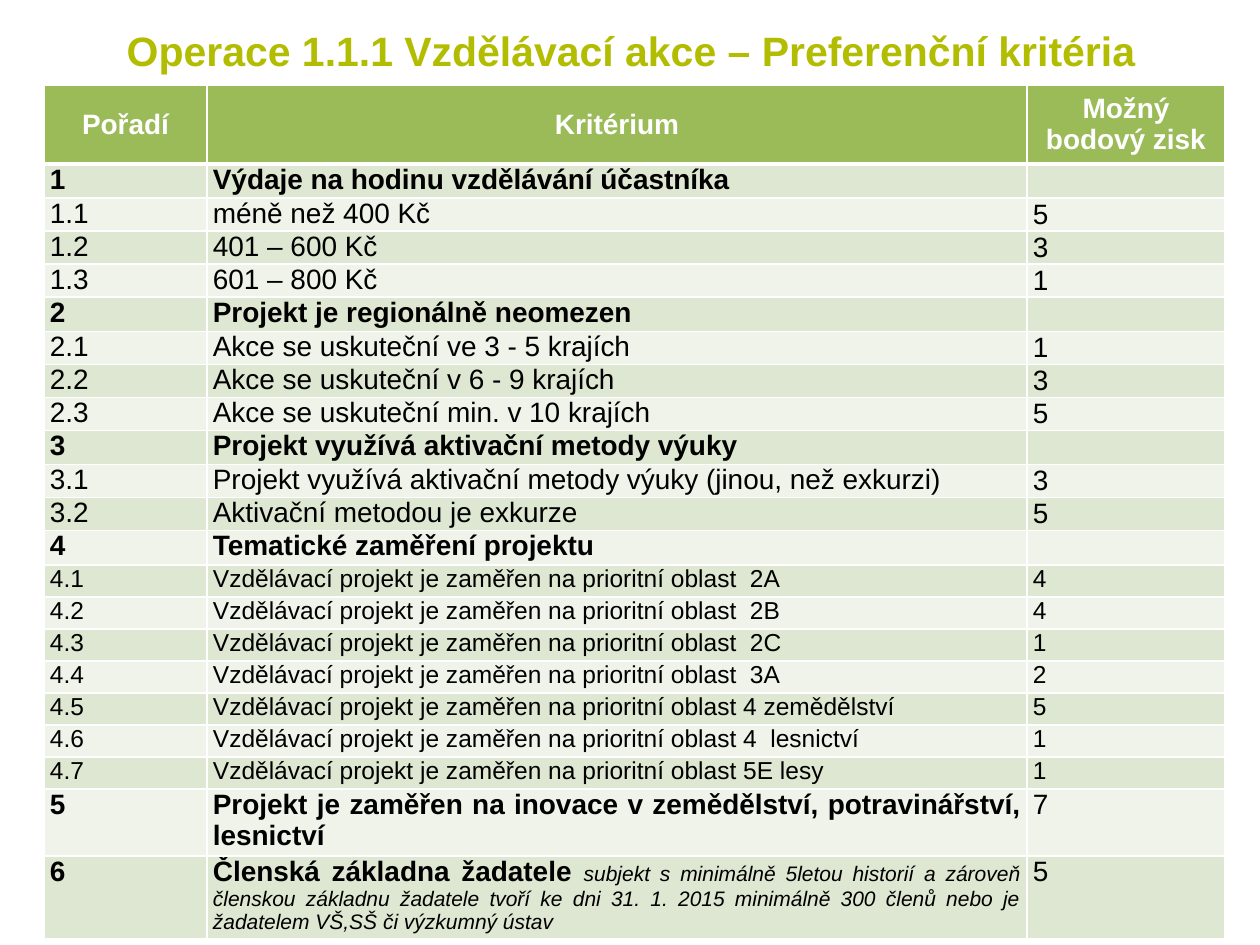
from pptx import Presentation
from pptx.dml.color import RGBColor
from pptx.enum.text import MSO_ANCHOR, MSO_AUTO_SIZE, PP_ALIGN
from pptx.oxml import parse_xml
from pptx.oxml.ns import nsdecls
from pptx.util import Pt

LIME = RGBColor(0xB2, 0xBC, 0x00)
GREEN = RGBColor(0x9B, 0xBB, 0x59)
SAGE = RGBColor(0xDE, 0xE7, 0xD1)
MIST = RGBColor(0xEF, 0xF3, 0xEA)
WHITE = RGBColor(0xFF, 0xFF, 0xFF)
BLACK = RGBColor(0x00, 0x00, 0x00)
CENTER, JUSTIFY = PP_ALIGN.CENTER, PP_ALIGN.JUSTIFY
TOP, MIDDLE = MSO_ANCHOR.TOP, MSO_ANCHOR.MIDDLE
NO_AUTOFIT = MSO_AUTO_SIZE.NONE
TITLE_ONLY = 5
EMU_PER_PX = 914400 / 126

HEADINGS = ("Pořadí", "Kritérium", "Možný bodový zisk")
CRITERIA = [
    ("1", "Výdaje na hodinu vzdělávání účastníka", ""),
    ("1.1", "méně než 400 Kč", "5"),
    ("1.2", "401 – 600 Kč", "3"),
    ("1.3", "601 – 800 Kč", "1"),
    ("2", "Projekt je regionálně neomezen", ""),
    ("2.1", "Akce se uskuteční ve 3 - 5 krajích", "1"),
    ("2.2", "Akce se uskuteční v 6 - 9 krajích", "3"),
    ("2.3", "Akce se uskuteční min. v 10 krajích", "5"),
    ("3", "Projekt využívá aktivační metody výuky", ""),
    ("3.1", "Projekt využívá aktivační metody výuky (jinou, než exkurzi)", "3"),
    ("3.2", "Aktivační metodou je exkurze", "5"),
    ("4", "Tematické zaměření projektu", ""),
    ("4.1", "Vzdělávací projekt je zaměřen na prioritní oblast  2A", "4"),
    ("4.2", "Vzdělávací projekt je zaměřen na prioritní oblast  2B", "4"),
    ("4.3", "Vzdělávací projekt je zaměřen na prioritní oblast  2C", "1"),
    ("4.4", "Vzdělávací projekt je zaměřen na prioritní oblast  3A", "2"),
    ("4.5", "Vzdělávací projekt je zaměřen na prioritní oblast 4 zemědělství", "5"),
    ("4.6", "Vzdělávací projekt je zaměřen na prioritní oblast 4  lesnictví", "1"),
    ("4.7", "Vzdělávací projekt je zaměřen na prioritní oblast 5E lesy", "1"),
    ("5", "Projekt je zaměřen na inovace v zemědělství, potravinářství, lesnictví", "7"),
    ("6", "Členská základna žadatele ", "5"),
]
MEMBERSHIP_NOTE = (
    "subjekt s minimálně 5letou historií a zároveň členskou základnu žadatele "
    "tvoří ke dni 31. 1. 2015 minimálně 300 členů nebo je žadatelem VŠ,SŠ "
    "či výzkumný ústav"
)
COLUMN_WIDTHS = (163, 820, 198)
HEADER_HEIGHT = 79
SPECIAL_HEIGHTS = {"5": 67, "6": 83}


def px(length):
    return round(length * EMU_PER_PX)


def apply(target, values):
    for name, value in values.items():
        setattr(target, name, value)


def is_theme(rank):
    return rank.startswith("4.")


def row_height(rank):
    if rank in SPECIAL_HEIGHTS:
        return SPECIAL_HEIGHTS[rank]
    if is_theme(rank):
        return 32
    return 33 if "." in rank else 34


class SlideBuilder:
    font_name = "Arial"

    def __init__(self, presentation):
        self.slide = presentation.slides.add_slide(presentation.slide_layouts[TITLE_ONLY])

    def add_text(self, paragraph, text, size, color, bold=False, italic=False):
        run = paragraph.add_run()
        run.text = text
        apply(run.font, {"name": self.font_name, "size": Pt(size),
                         "bold": bold, "italic": italic})
        run.font.color.rgb = color

    def title(self, text, left, top, width, height):
        heading = self.slide.shapes.title
        apply(heading, {"left": px(left), "top": px(top),
                        "width": px(width), "height": px(height)})
        apply(heading.text_frame, {"word_wrap": True, "auto_size": NO_AUTOFIT,
                                   "vertical_anchor": MIDDLE})
        paragraph = heading.text_frame.paragraphs[0]
        paragraph.alignment = CENTER
        self.add_text(paragraph, text, 23.4, LIME, bold=True)

    def table(self, left, top, widths, heights):
        frame = self.slide.shapes.add_table(
            len(heights), len(widths), px(left), px(top), px(sum(widths)), px(sum(heights)))
        grid = frame.table
        for column, width in zip(grid.columns, widths):
            column.width = px(width)
        for row, height in zip(grid.rows, heights):
            row.height = px(height)
        return grid

    def cell(self, cell, fill, anchor, align, margins, borders):
        side, edge = margins
        apply(cell, {"margin_left": px(side), "margin_right": px(side),
                     "margin_top": px(edge), "margin_bottom": px(edge),
                     "vertical_anchor": anchor})
        properties = cell._tc.get_or_add_tcPr()
        for tag, points in borders.items():
            properties.append(parse_xml(
                f'<a:{tag} {nsdecls("a")} w="{Pt(points)}"><a:solidFill>'
                f'<a:srgbClr val="{WHITE}"/></a:solidFill></a:{tag}>'))
        cell.fill.solid()
        cell.fill.fore_color.rgb = fill
        paragraph = cell.text_frame.paragraphs[0]
        paragraph.alignment = align
        return paragraph

    def header_row(self, cells):
        borders = {"lnL": 1, "lnR": 1, "lnT": 1, "lnB": 3}
        for cell, heading in zip(cells, HEADINGS):
            paragraph = self.cell(cell, GREEN, MIDDLE, CENTER, (12, 6), borders)
            self.add_text(paragraph, heading, 16, WHITE, bold=True)

    def criterion_row(self, cells, criterion, fill):
        rank = criterion[0]
        size = 14 if is_theme(rank) else 16
        score_anchor = MIDDLE if rank[0] in "123" else TOP
        borders = {"lnL": 1, "lnR": 1, "lnB": 1}
        for index, (cell, text) in enumerate(zip(cells, criterion)):
            is_score = index == 2
            anchor = score_anchor if is_score else TOP
            paragraph = self.cell(cell, fill, anchor, JUSTIFY, (6, 0), borders)
            if text:
                self.add_text(paragraph, text, size, BLACK,
                              bold="." not in rank and not is_score)
            else:
                paragraph._p.get_or_add_endParaRPr().set("sz", str(size * 100))
            if rank == "6" and index == 1:
                self.add_text(paragraph, MEMBERSHIP_NOTE, 12, BLACK, italic=True)


def main():
    presentation = Presentation()
    apply(presentation, {"slide_width": px(1260), "slide_height": px(945)})
    builder = SlideBuilder(presentation)
    builder.title("Operace 1.1.1 Vzdělávací akce – Preferenční kritéria", 64, 16, 1134, 69)
    heights = [HEADER_HEIGHT] + [row_height(rank) for rank, _, _ in CRITERIA]
    grid = builder.table(44, 85, COLUMN_WIDTHS, heights)
    header, *body = grid.rows
    builder.header_row(header.cells)
    for index, (row, criterion) in enumerate(zip(body, CRITERIA)):
        builder.criterion_row(row.cells, criterion, MIST if index % 2 else SAGE)
    presentation.save("out.pptx")


if __name__ == "__main__":
    main()
